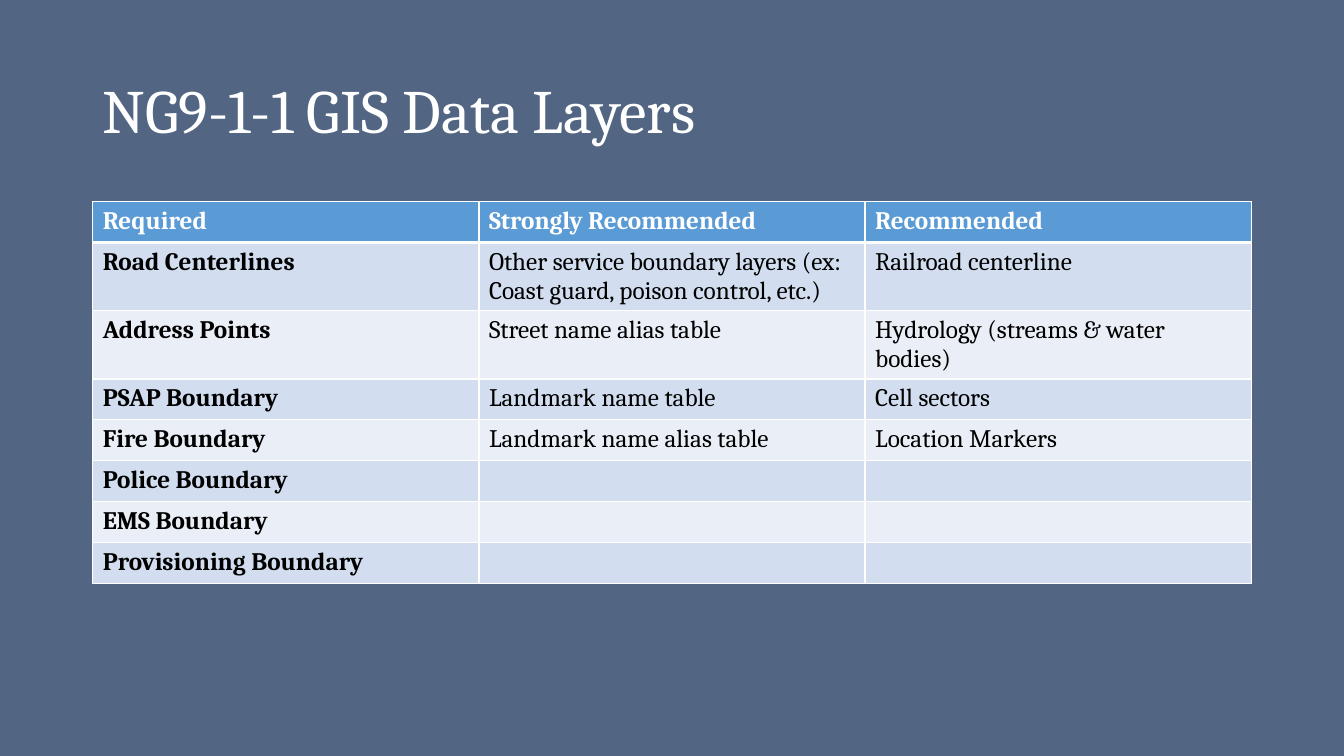
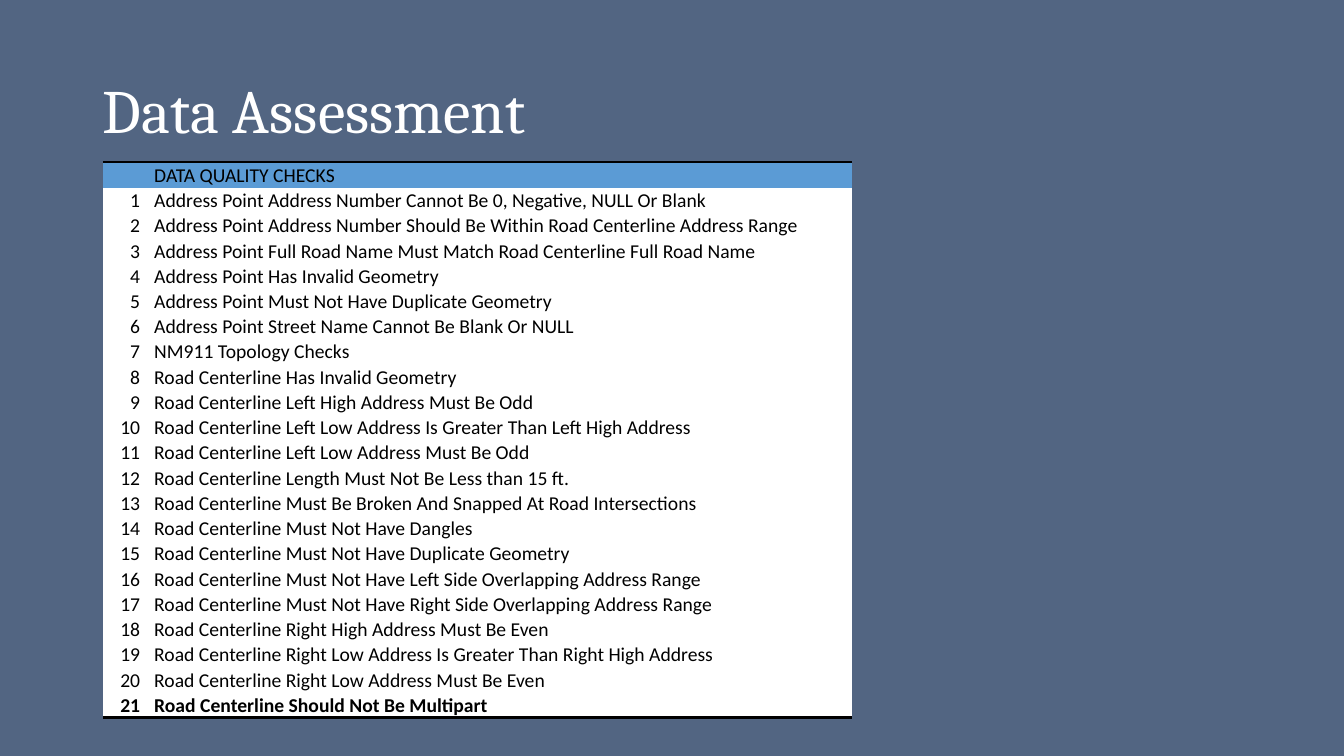
"""Builds two slides on NG9-1-1 GIS data: the data layers and the data quality checks."""
from lxml.etree import SubElement
from pptx import Presentation
from pptx.dml.color import RGBColor
from pptx.enum.text import MSO_ANCHOR as Anchor, PP_ALIGN as Align
from pptx.oxml.ns import qn
from pptx.util import Inches, Pt

COLORS = {
    "background": "526582",
    "white": "FFFFFF",
    "black": "000000",
    "header": "5B9BD5",
    "odd_row": "D2DEEF",
    "even_row": "EAEFF7",
}

LAYERS_TITLE = "NG9-1-1 GIS Data Layers"
LAYERS = [
    ("Required", "Strongly Recommended", "Recommended"),
    ("Road Centerlines",
     "Other service boundary layers (ex: Coast guard, poison control, etc.)",
     "Railroad centerline"),
    ("Address Points", "Street name alias table", "Hydrology (streams & water bodies)"),
    ("PSAP Boundary", "Landmark name table", "Cell sectors"),
    ("Fire Boundary", "Landmark name alias table", "Location Markers"),
    ("Police Boundary", "", ""),
    ("EMS Boundary", "", ""),
    ("Provisioning Boundary", "", ""),
]

CHECKS_TITLE = "Data Assessment"
CHECKS_HEADER = "DATA QUALITY CHECKS"
CHECKS = [
    "Address Point Address Number Cannot Be 0, Negative, NULL Or Blank",
    "Address Point Address Number Should Be Within Road Centerline Address Range",
    "Address Point Full Road Name Must Match Road Centerline Full Road Name",
    "Address Point Has Invalid Geometry",
    "Address Point Must Not Have Duplicate Geometry",
    "Address Point Street Name Cannot Be Blank Or NULL",
    "NM911 Topology Checks",
    "Road Centerline Has Invalid Geometry",
    "Road Centerline Left High Address Must Be Odd",
    "Road Centerline Left Low Address Is Greater Than Left High Address",
    "Road Centerline Left Low Address Must Be Odd",
    "Road Centerline Length Must Not Be Less than 15 ft.",
    "Road Centerline Must Be Broken And Snapped At Road Intersections",
    "Road Centerline Must Not Have Dangles",
    "Road Centerline Must Not Have Duplicate Geometry",
    "Road Centerline Must Not Have Left Side Overlapping Address Range",
    "Road Centerline Must Not Have Right Side Overlapping Address Range",
    "Road Centerline Right High Address Must Be Even",
    "Road Centerline Right Low Address Is Greater Than Right High Address",
    "Road Centerline Right Low Address Must Be Even",
    "Road Centerline Should Not Be Multipart",
]


def rgb(name):
    return RGBColor.from_string(COLORS[name])


def style_font(font, name, size, color, bold=False):
    font.name, font.size, font.bold = name, Pt(size), bold
    font.color.rgb = rgb(color)


def add_titled_slide(prs, text):
    slide = prs.slides.add_slide(prs.slide_layouts[5])
    title = slide.shapes.title
    title.left, title.top = Inches(0.92), Inches(0.4)
    title.width, title.height = Inches(11.5), Inches(1.45)
    frame = title.text_frame
    frame.text = text
    frame.vertical_anchor = Anchor.MIDDLE
    paragraph = frame.paragraphs[0]
    paragraph.alignment = Align.LEFT
    paragraph.line_spacing = 0.9
    style_font(paragraph.runs[0].font, "Cambria", 44, "white")
    return slide


def add_plain_table(slide, rows, left, top, widths, height):
    table = slide.shapes.add_table(
        len(rows), len(widths), Inches(left), Inches(top),
        Inches(sum(widths)), Inches(height)).table
    table.first_row = table.horz_banding = False
    for column, width in zip(table.columns, widths):
        column.width = Inches(width)
    for row in table.rows:
        row.height = int(Inches(height) / len(rows))
    return table


def set_borders(cell, borders):
    properties = cell._tc.get_or_add_tcPr()
    for side in "LRTB":
        line = SubElement(properties, qn(f"a:ln{side}"))
        if side not in borders:
            SubElement(line, qn("a:noFill"))
            continue
        color, points = borders[side]
        line.set("w", str(Pt(points)))
        SubElement(SubElement(line, qn("a:solidFill")), qn("a:srgbClr"), val=COLORS[color])


def fill_cell(cell, text, fill, borders, name, size, color, bold):
    cell.text = text
    set_borders(cell, borders)
    cell.fill.solid()
    cell.fill.fore_color.rgb = rgb(fill)
    paragraph = cell.text_frame.paragraphs[0]
    for run in paragraph.runs:
        style_font(run.font, name, size, color, bold)
    if not text:
        SubElement(paragraph._p, qn("a:endParaRPr"), sz=str(size * 100))


def build_layers(prs):
    slide = add_titled_slide(prs, LAYERS_TITLE)
    table = add_plain_table(slide, LAYERS, 0.92, 2, [3.83] * 3, 3.24)
    for r, row in enumerate(LAYERS):
        fill = "header" if r == 0 else "odd_row" if r % 2 else "even_row"
        borders = {side: ("white", 1) for side in "LRTB"}
        if r < 2:
            borders["B" if r == 0 else "T"] = ("white", 3)
        for c, text in enumerate(row):
            fill_cell(table.cell(r, c), text, fill, borders, "Cambria", 18,
                      "white" if r == 0 else "black", r == 0 or c == 0)


def build_checks(prs):
    slide = add_titled_slide(prs, CHECKS_TITLE)
    rows = [("", "", CHECKS_HEADER)]
    rows += [(str(number), "", check) for number, check in enumerate(CHECKS, 1)]
    table = add_plain_table(slide, rows, 1.02, 1.61, [0.38, 0.12, 6.93], 5.51)
    last = len(rows) - 1
    rules = {0: {"T": ("black", 2)}, last: {"B": ("black", 2)}}
    for r, row in enumerate(rows):
        for c, text in enumerate(row):
            cell = table.cell(r, c)
            fill_cell(cell, text, "white" if r else "header", rules.get(r, {}),
                      "Calibri", 14, "black", r == last)
            cell.vertical_anchor = Anchor.BOTTOM
            cell.margin_left = cell.margin_right = cell.margin_top = Inches(0.01)
            cell.margin_bottom = 0
            if c == 0:
                cell.text_frame.paragraphs[0].alignment = Align.RIGHT


def main():
    prs = Presentation()
    prs.slide_width, prs.slide_height = Inches(13.33), Inches(7.5)
    background = prs.slide_master.background.fill
    background.solid()
    background.fore_color.rgb = rgb("background")
    build_layers(prs)
    build_checks(prs)
    prs.save("out.pptx")


if __name__ == "__main__":
    main()
